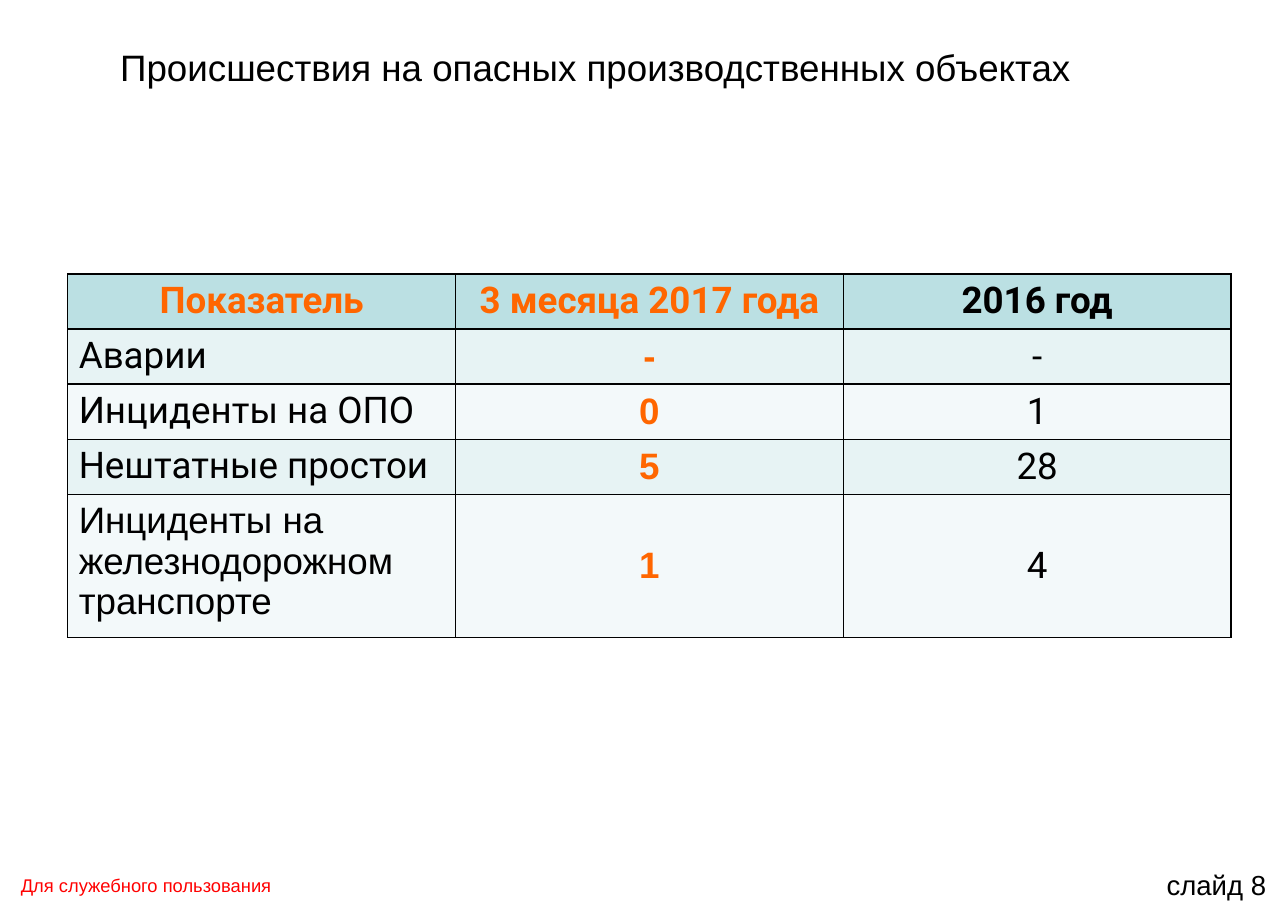
from dataclasses import dataclass

from lxml import etree
from pptx import Presentation
from pptx.dml.color import RGBColor
from pptx.enum.text import MSO_ANCHOR, PP_ALIGN
from pptx.oxml.ns import qn
from pptx.util import Pt

LEFT, CENTER = PP_ALIGN.LEFT, PP_ALIGN.CENTER
TOP, MIDDLE = MSO_ANCHOR.TOP, MSO_ANCHOR.MIDDLE

COLORS = {
    "black": "000000",
    "red": "FF0000",
    "orange": "FF6600",
    "header": "BBE0E3",
    "odd_row": "E7F3F4",
    "even_row": "F3F9FA",
}
BORDER_SIDES = ("a:lnL", "a:lnR", "a:lnT", "a:lnB")
TABLE_LEFT, TABLE_TOP = 44.3, 179
COLUMN_WIDTH = 253.4
ROW_HEIGHTS = (35.4, 35.4, 35.4, 35.4, 87.7)
TABLE_TEXT = (
    ("Показатель", "3 месяца 2017 года", "2016 год"),
    ("Аварии", "-", "-"),
    ("Инциденты на ОПО", "0", "1"),
    ("Нештатные простои", "5", "28"),
    ("Инциденты на железнодорожном транспорте", "1", "4"),
)


@dataclass
class Label:
    text: str
    left: float
    top: float
    width: float
    height: float
    size: float
    color: str = "black"
    anchor: MSO_ANCHOR = TOP
    margin_x: float = 7.2
    margin_y: float = 3.6


LABELS = (
    Label("Для служебного пользования", 6.5, 570.2, 205.2, 17.3, 12, "red", MIDDLE),
    Label("слайд 8", 755.3, 563.8, 85, 31, 18),
    Label("Происшествия на опасных производственных объектах",
          70.6, 25.2, 730, 36, 24, margin_x=7.9, margin_y=4.3),
)


def style_text(p, size: float, color: str, font: str = "Arial",
               bold: bool = False, align: PP_ALIGN = LEFT) -> None:
    p.alignment = align
    for r in p.runs:
        r.font.name = font
        r.font.size = Pt(size)
        r.font.bold = bold
        r.font.color.rgb = RGBColor.from_string(COLORS[color])


def add_label(slide, label: Label) -> None:
    sp = slide.shapes.add_textbox(Pt(label.left), Pt(label.top),
                                  Pt(label.width), Pt(label.height))
    tf = sp.text_frame
    tf.word_wrap = True
    tf.vertical_anchor = label.anchor
    tf.margin_left = tf.margin_right = Pt(label.margin_x)
    tf.margin_top = tf.margin_bottom = Pt(label.margin_y)
    tf.text = label.text
    style_text(tf.paragraphs[0], label.size, label.color)


def add_borders(cell) -> None:
    tc_pr = cell._tc.get_or_add_tcPr()
    for position, side in enumerate(BORDER_SIDES):
        ln = etree.Element(qn(side), w=str(Pt(1)))
        fill = etree.SubElement(ln, qn("a:solidFill"))
        etree.SubElement(fill, qn("a:srgbClr"), val=COLORS["black"])
        tc_pr.insert(position, ln)


def style_cell(cell, row: int, column: int) -> None:
    """Apply the header, row-band and current-period rules to a cell."""
    header, last = row == 0, row == len(TABLE_TEXT) - 1
    current = column == 1
    fill = "header" if header else "odd_row" if row % 2 else "even_row"
    arial = not header and (current or (last and column == 0))
    orange = current or (header and column == 0)

    cell.fill.solid()
    cell.fill.fore_color.rgb = RGBColor.from_string(COLORS[fill])
    cell.vertical_anchor = TOP if header or column == 0 else MIDDLE
    style_text(cell.text_frame.paragraphs[0], 24,
               "orange" if orange else "black",
               "Arial" if arial else "Roboto",
               bold=header or current,
               align=CENTER if header or column else LEFT)
    add_borders(cell)


def add_incident_table(slide) -> None:
    rows, columns = len(TABLE_TEXT), len(TABLE_TEXT[0])
    table = slide.shapes.add_table(
        rows, columns, Pt(TABLE_LEFT), Pt(TABLE_TOP),
        Pt(COLUMN_WIDTH * columns), Pt(sum(ROW_HEIGHTS))).table
    for column in table.columns:
        column.width = Pt(COLUMN_WIDTH)
    for i, (height, texts) in enumerate(zip(ROW_HEIGHTS, TABLE_TEXT)):
        table.rows[i].height = Pt(height)
        for j, text in enumerate(texts):
            cell = table.cell(i, j)
            cell.text_frame.text = text
            style_cell(cell, i, j)


def main() -> None:
    prs = Presentation()
    prs.slide_width, prs.slide_height = Pt(841.68), Pt(595.44)
    slide = prs.slides.add_slide(prs.slide_layouts[6])
    for label in LABELS:
        add_label(slide, label)
    add_incident_table(slide)
    prs.save("out.pptx")


if __name__ == "__main__":
    main()
